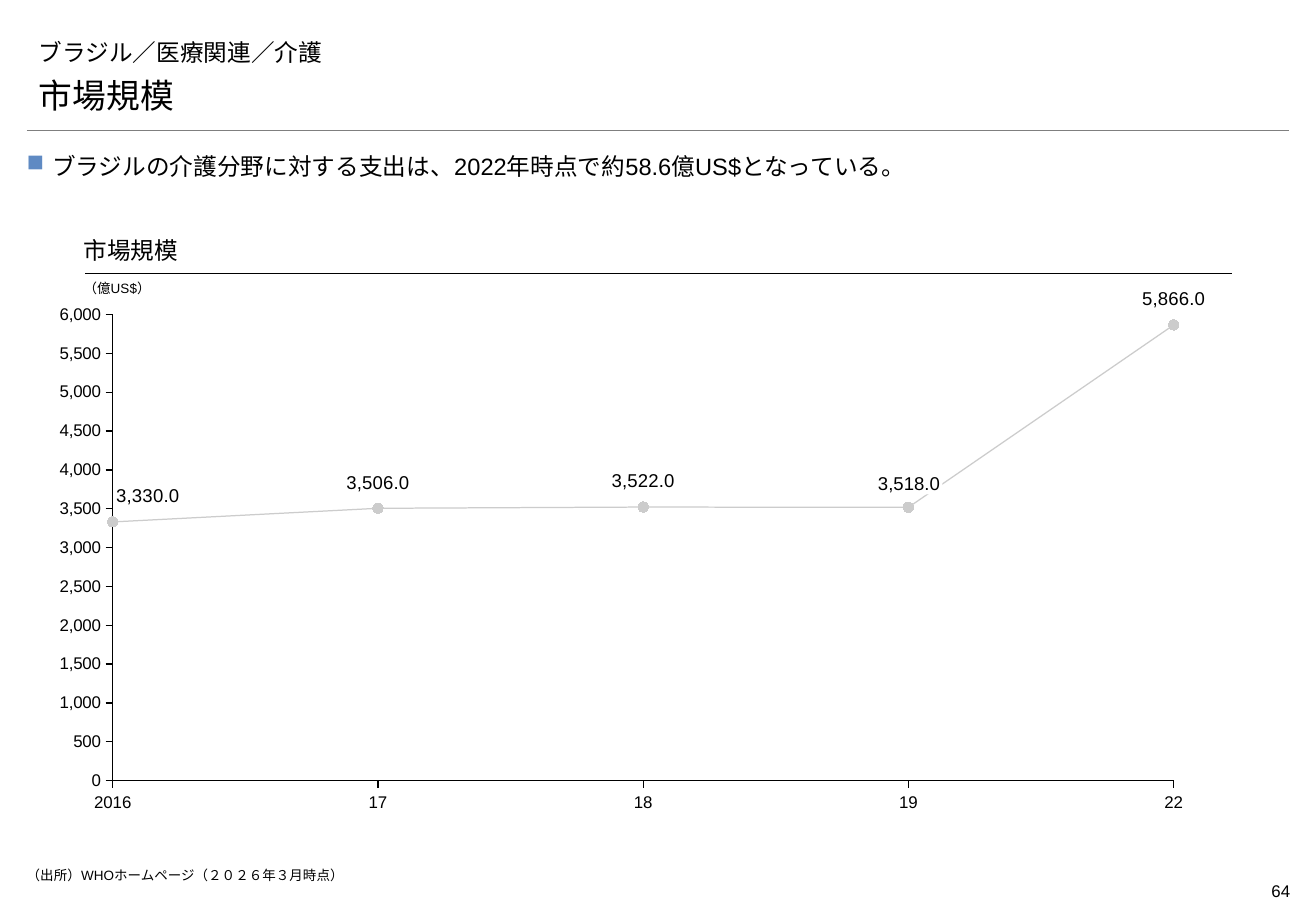
"""Build the Brazilian nursing-care market size slide."""
from lxml.etree import fromstring
from pptx import Presentation
from pptx.chart.data import CategoryChartData
from pptx.dml.color import RGBColor
from pptx.enum.chart import (XL_CHART_TYPE, XL_LABEL_POSITION, XL_MARKER_STYLE,
                             XL_TICK_LABEL_POSITION, XL_TICK_MARK)
from pptx.enum.shapes import MSO_CONNECTOR, MSO_SHAPE
from pptx.enum.text import MSO_ANCHOR, PP_ALIGN
from pptx.oxml import parse_xml
from pptx.oxml.ns import nsdecls, qn
from pptx.util import Cm, Pt

THEME = {
    "body": "Arial", "heading": "Montserrat",
    "ink": RGBColor(0, 0, 0), "paper": RGBColor(255, 255, 255),
    "rule": RGBColor(0x7F, 0x7F, 0x7F), "series": RGBColor(0xCC, 0xCC, 0xCC),
    "bullet": "5F8AC3",
    "title": 20, "lead": 14, "label": 11, "axis": 10, "note": 8,
}
BOTTOM, MIDDLE = MSO_ANCHOR.BOTTOM, MSO_ANCHOR.MIDDLE
PADDED, FLUSH = (0.25, 0.13, 0.25, 0.13), (0, 0, 0, 0)
MESSAGE = "ブラジルの介護分野に対する支出は、2022年時点で約58.6億US$となっている。"
TEXTS = [
    ("ブラジル／医療関連／介護", (0.56, 0.66, 26.39, 0.86), "heading", "lead",
     {"anchor": BOTTOM, "insets": PADDED}),
    ("市場規模", (0.56, 1.42, 26.42, 1.12), "heading", "title",
     {"anchor": BOTTOM, "insets": PADDED}),
    ("市場規模", (1.75, 4.93, 24, 0.79), "heading", "lead",
     {"anchor": BOTTOM, "insets": (0, 0.13, 0, 0.2)}),
    ("（億US$）", (1.75, 5.72, 2.31, 0.61), "body", "note", {"anchor": MIDDLE}),
    ("（出所）WHOホームページ（２０２６年３月時点）", (0.56, 18.14, 24, 0.41),
     "body", "note", {}),
    ("64", (24.97, 18.29, 2.01, 0.69), "body", "axis",
     {"align": PP_ALIGN.RIGHT, "insets": (0, 0.13, 0, 0.13)}),
]
RULES = [(0.56, 26.95, 2.72, "rule", 0.25), (1.78, 25.76, 5.72, "ink", 0.75)]
SPENDING = {"2016": 3330, "17": 3506, "18": 3522, "19": 3518, "22": 5866}
CHART = (0.84, 5.61, 24.49, 11.4)
PLOT = {"x": 0.062, "y": 0.085, "w": 0.906, "h": 0.855}
LABEL_SHIFTS = {0: (0.03, -0.01), 1: (0, -0.01), 2: (0, -0.01), 4: (0, -0.01)}
MASKED_LABEL = ("3,518.0", (18.31, 9.88, 1.4, 0.46))


def assign(target, **values):
    for name, value in values.items():
        setattr(target, name, value)


def write(shape, text, font, size, align=PP_ALIGN.LEFT, anchor=MSO_ANCHOR.TOP,
          insets=FLUSH, wrap=True):
    frame = shape.text_frame
    sides = ("margin_left", "margin_top", "margin_right", "margin_bottom")
    assign(frame, word_wrap=wrap, vertical_anchor=anchor,
           **{side: Cm(inset) for side, inset in zip(sides, insets)})
    paragraph = frame.paragraphs[0]
    paragraph.alignment = align
    span = paragraph.add_run()
    span.text = text
    assign(span.font, name=THEME[font], size=Pt(THEME[size]))
    span.font.color.rgb = THEME["ink"]
    return paragraph


def add_text(page, text, place, font, size, **options):
    box = page.shapes.add_textbox(*map(Cm, place))
    return write(box, text, font, size, **options)


def add_rule(page, left, right, top, color, weight):
    rule = page.shapes.add_connector(
        MSO_CONNECTOR.STRAIGHT, Cm(left), Cm(top), Cm(right), Cm(top))
    rule.line.color.rgb = THEME[color]
    rule.line.width = Pt(weight)
    rule._element.spPr.append(parse_xml(f"<a:effectLst {nsdecls('a')}/>"))


def add_message(page):
    paragraph = add_text(page, MESSAGE, (0.56, 3.12, 26.39, 0.61), "body", "lead",
                         align=PP_ALIGN.JUSTIFY)
    assign(paragraph, line_spacing=1.1, space_after=Pt(2))
    properties = paragraph._p.get_or_add_pPr()
    properties.set("marL", str(Cm(0.53)))
    properties.set("indent", str(Cm(-0.53)))
    for bullet in (f'<a:buClr {nsdecls("a")}><a:srgbClr val="{THEME["bullet"]}"/></a:buClr>',
                   f'<a:buChar {nsdecls("a")} char="■"/>'):
        properties.append(parse_xml(bullet))


def manual_layout(target="", **values):
    parts = "".join(f'<c:{name} val="{value}"/>' for name, value in values.items())
    return parse_xml(f"<c:layout {nsdecls('c')}><c:manualLayout>{target}{parts}"
                     "</c:manualLayout></c:layout>")


def style_axes(chart):
    for axis in (chart.category_axis, chart.value_axis):
        assign(axis, has_major_gridlines=False, major_tick_mark=XL_TICK_MARK.OUTSIDE)
        axis.format.line.color.rgb = THEME["ink"]
        axis.format.line.width = Pt(0.75)
    chart.category_axis.tick_label_position = XL_TICK_LABEL_POSITION.NONE
    values = chart.value_axis
    assign(values, minimum_scale=0, maximum_scale=6000, major_unit=500)
    assign(values.tick_labels, number_format="#,##0", number_format_is_linked=False)
    values._element.find(qn("c:majorUnit")).addprevious(
        parse_xml(f'<c:crossBetween {nsdecls("c")} val="midCat"/>'))


def style_series(series):
    series.smooth = False
    series.format.line.color.rgb = THEME["series"]
    series.format.line.width = Pt(0.75)
    marker = series.marker
    assign(marker, style=XL_MARKER_STYLE.CIRCLE, size=6)
    marker.format.fill.solid()
    marker.format.fill.fore_color.rgb = THEME["series"]
    marker.format.line.color.rgb = THEME["series"]
    series.data_labels.show_value = False
    for index, (right, down) in LABEL_SHIFTS.items():
        label = series.points[index].data_label
        assign(label.font, name=THEME["body"], size=Pt(THEME["label"]))
        label.font.color.rgb = THEME["ink"]
        label.position = XL_LABEL_POSITION.ABOVE
        element = label._get_or_add_dLbl()
        element.find(qn("c:idx")).addnext(manual_layout(x=right, y=down))
    series.data_labels._element.append(fromstring(
        f'<c:extLst {nsdecls("c", "a")}><c:ext uri="{{CE6537A1-D6FC-4f65-9D91-7224C49458BB}}" '
        'xmlns:c15="http://schemas.microsoft.com/office/drawing/2012/chart">'
        '<c15:showLeaderLines val="1"/><c15:leaderLines><c:spPr><a:ln w="9525"><a:solidFill>'
        '<a:srgbClr val="000000"/></a:solidFill></a:ln></c:spPr></c15:leaderLines>'
        '</c:ext></c:extLst>'))


def add_spending_chart(page):
    data = CategoryChartData(number_format="#,##0.0")
    data.categories = list(SPENDING)
    data.add_series("市場規模", list(SPENDING.values()))
    chart = page.shapes.add_chart(
        XL_CHART_TYPE.LINE_MARKERS, *map(Cm, CHART), data).chart
    assign(chart, has_legend=False, has_title=False)
    assign(chart.font, name=THEME["body"], size=Pt(THEME["axis"]))
    chart.font.color.rgb = THEME["ink"]
    chart.plots[0].vary_by_categories = False
    area = chart._chartSpace.chart.plotArea
    for layout in area.findall(qn("c:layout")):
        area.remove(layout)
    area.insert(0, manual_layout('<c:layoutTarget val="inner"/><c:xMode val="edge"/>'
                                 '<c:yMode val="edge"/>', **PLOT))
    style_axes(chart)
    style_series(chart.plots[0].series[0])


def add_chart_labels(page):
    left, _, width, _ = CHART
    for index, year in enumerate(SPENDING):
        center = left + width * (PLOT["x"] + PLOT["w"] * index / (len(SPENDING) - 1))
        span_width = 0.2 * len(year)
        add_text(page, year, (center - span_width / 2, 16.56, span_width, 0.43),
                 "body", "axis", align=PP_ALIGN.CENTER, wrap=False)
    text, place = MASKED_LABEL
    mask = page.shapes.add_shape(MSO_SHAPE.RECTANGLE, *map(Cm, place))
    mask.shadow.inherit = False
    mask.fill.solid()
    mask.fill.fore_color.rgb = THEME["paper"]
    mask.line.fill.background()
    write(mask, text, "body", "label", align=PP_ALIGN.CENTER, anchor=BOTTOM,
          insets=(0.05, 0, 0.05, 0), wrap=False)


def main():
    deck = Presentation()
    assign(deck, slide_width=Cm(27.52), slide_height=Cm(19.05))
    page = deck.slides.add_slide(deck.slide_layouts[6])
    for rule in RULES:
        add_rule(page, *rule)
    for text, place, font, size, options in TEXTS:
        add_text(page, text, place, font, size, **options)
    add_message(page)
    add_spending_chart(page)
    add_chart_labels(page)
    deck.save("out.pptx")


if __name__ == "__main__":
    main()
